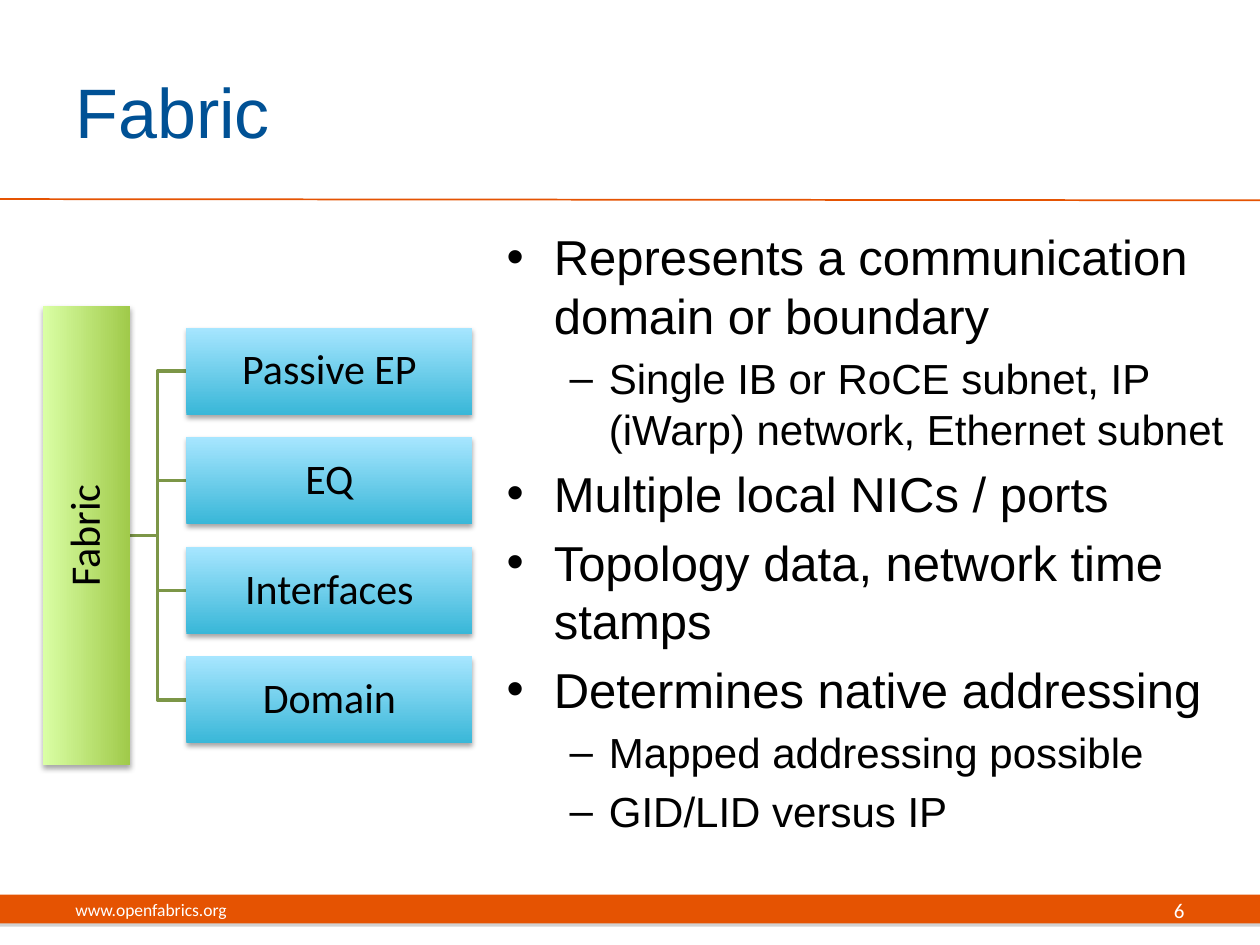
from lxml import etree
from pptx import Presentation
from pptx import util as u
from pptx.dml.color import RGBColor
from pptx.enum import shapes, text
from pptx.oxml.ns import qn

COLORS = {
    "orange": "E55302", "title": "005195", "black": "000000",
    "white": "FFFFFF", "gray": "808080", "branch": "7C9647",
    "green": "A0CA4A", "light_green": "DAFFA5",
    "blue": "39B7D8", "light_blue": "A7E6FF",
}


class Deck:
    def __init__(self):
        self.prs = Presentation()
        self.prs.slide_width = u.Inches(10)
        self.prs.slide_height = u.Inches(7.5)
        self.s = self.prs.slides.add_slide(self.prs.slide_layouts[1])

    def color(self, name):
        return RGBColor.from_string(COLORS[name])

    def place(self, sp, at):
        sp.left, sp.top, sp.width, sp.height = map(u.Inches, at)

    def style(self, p, font, size, color, align=text.PP_ALIGN.LEFT):
        p.alignment = align
        for r in p.runs:
            r.font.name = font
            r.font.size = u.Pt(size)
            r.font.color.rgb = self.color(color)

    def shadow(self, sp, color, blur):
        sp.shadow.inherit = False
        effects = sp._element.spPr.find(qn("a:effectLst"))
        outer = etree.SubElement(
            effects, qn("a:outerShdw"), blurRad=str(u.Pt(blur)),
            dist=str(u.Pt(1.8)), dir="5400000", rotWithShape="0")
        rgb = etree.SubElement(outer, qn("a:srgbClr"), val=COLORS[color])
        etree.SubElement(rgb, qn("a:alpha"), val="35000")

    def rect(self, at):
        sp = self.s.shapes.add_shape(
            shapes.MSO_SHAPE.RECTANGLE, *map(u.Inches, at))
        sp.line.fill.background()
        return sp

    def bar(self, at, color):
        sp = self.rect(at)
        sp.fill.solid()
        sp.fill.fore_color.rgb = self.color(color)
        self.shadow(sp, "gray", 0)

    def rule(self, x1, y1, x2, y2):
        c = self.s.shapes.add_connector(
            shapes.MSO_CONNECTOR.STRAIGHT, *map(u.Inches, (x1, y1, x2, y2)))
        c.line.color.rgb = self.color("orange")
        c.line.width = u.Pt(1)
        etree.SubElement(c._element.spPr, qn("a:effectLst"))

    def title(self, words, at):
        sp = self.s.shapes.title
        self.place(sp, at)
        tf = sp.text_frame
        tf.text = words
        tf.vertical_anchor = text.MSO_ANCHOR.MIDDLE
        self.style(tf.paragraphs[0], "Arial", 40, "title")

    def bullets(self, items, at):
        sp = self.s.placeholders[1]
        self.place(sp, at)
        tf = sp.text_frame
        tf.auto_size = text.MSO_AUTO_SIZE.NONE
        for i, (level, words) in enumerate(items):
            p = tf.add_paragraph() if i else tf.paragraphs[0]
            p.text = words
            p.level = level
            size = (28, 24)[level]
            p.space_before = u.Pt(size * 0.2 if i else 0)
            self.style(p, "Arial", size, "black")

    def label(self, words, at, size, align):
        tf = self.s.shapes.add_textbox(*map(u.Inches, at)).text_frame
        tf.word_wrap = True
        tf.vertical_anchor = text.MSO_ANCHOR.MIDDLE
        tf.text = words
        self.style(tf.paragraphs[0], "Calibri", size, "white", align)

    def branch(self, points):
        (x, y), *rest = [tuple(map(u.Inches, pt)) for pt in points]
        fb = self.s.shapes.build_freeform(x, y)
        fb.add_line_segments(rest, close=False)
        sp = fb.convert_to_shape()
        sp.fill.background()
        sp.line.color.rgb = self.color("branch")
        sp.line.width = u.Pt(2)
        sp.shadow.inherit = False

    def node(self, words, at, dark, light, rotation=0):
        sp = self.rect(at)
        sp.rotation = rotation
        sp.fill.gradient()
        sp.fill.gradient_angle = 90
        for stop, name in zip(sp.fill.gradient_stops, (dark, light)):
            stop.color.rgb = self.color(name)
        self.shadow(sp, "black", 3.1)
        tf = sp.text_frame
        tf.margin_left = tf.margin_right = u.Inches(0.02)
        tf.margin_top = tf.margin_bottom = u.Inches(0.02)
        tf.vertical_anchor = text.MSO_ANCHOR.MIDDLE
        tf.text = words
        p = tf.paragraphs[0]
        p.line_spacing = 0.9
        self.style(p, "Calibri", 24, "black", text.PP_ALIGN.CENTER)


def main():
    d = Deck()
    d.bar((0, 7.1, 10, 0.23), "orange")
    d.rule(0, 1.58, 10, 1.59)
    d.title("Fabric", (0.5, 0.25, 8.17, 1.25))
    d.bullets([
        (0, "Represents a communication domain or boundary"),
        (1, "Single IB or RoCE subnet, IP (iWarp) network, Ethernet subnet"),
        (0, "Multiple local NICs / ports"),
        (0, "Topology data, network time stamps"),
        (0, "Determines native addressing"),
        (1, "Mapped addressing possible"),
        (1, "GID/LID versus IP"),
    ], (3.92, 1.75, 5.92, 4.95))
    d.label("www.openfabrics.org", (0.5, 7.02, 3.17, 0.4), 10,
            text.PP_ALIGN.LEFT)
    d.label("6", (7.17, 7.02, 2.33, 0.4), 12, text.PP_ALIGN.RIGHT)

    children = ["Passive EP", "EQ", "Interfaces", "Domain"]
    mid, pitch, thick, length = 4.25, 0.87, 0.69, 3.64
    root_right, elbow, child_left = 1.03, 1.25, 1.48
    centers = [mid + (i - (len(children) - 1) / 2) * pitch
               for i in range(len(children))]
    for y in centers:
        d.branch([(root_right, mid), (elbow, mid), (elbow, y),
                  (child_left, y)])
    root_left = root_right - thick / 2 - length / 2
    d.node("Fabric", (root_left, mid - thick / 2, length, thick),
           "green", "light_green", 270)
    for words, y in zip(children, centers):
        d.node(words, (child_left, y - thick / 2, 2.27, thick),
               "blue", "light_blue")
    d.prs.save("out.pptx")


if __name__ == "__main__":
    main()
